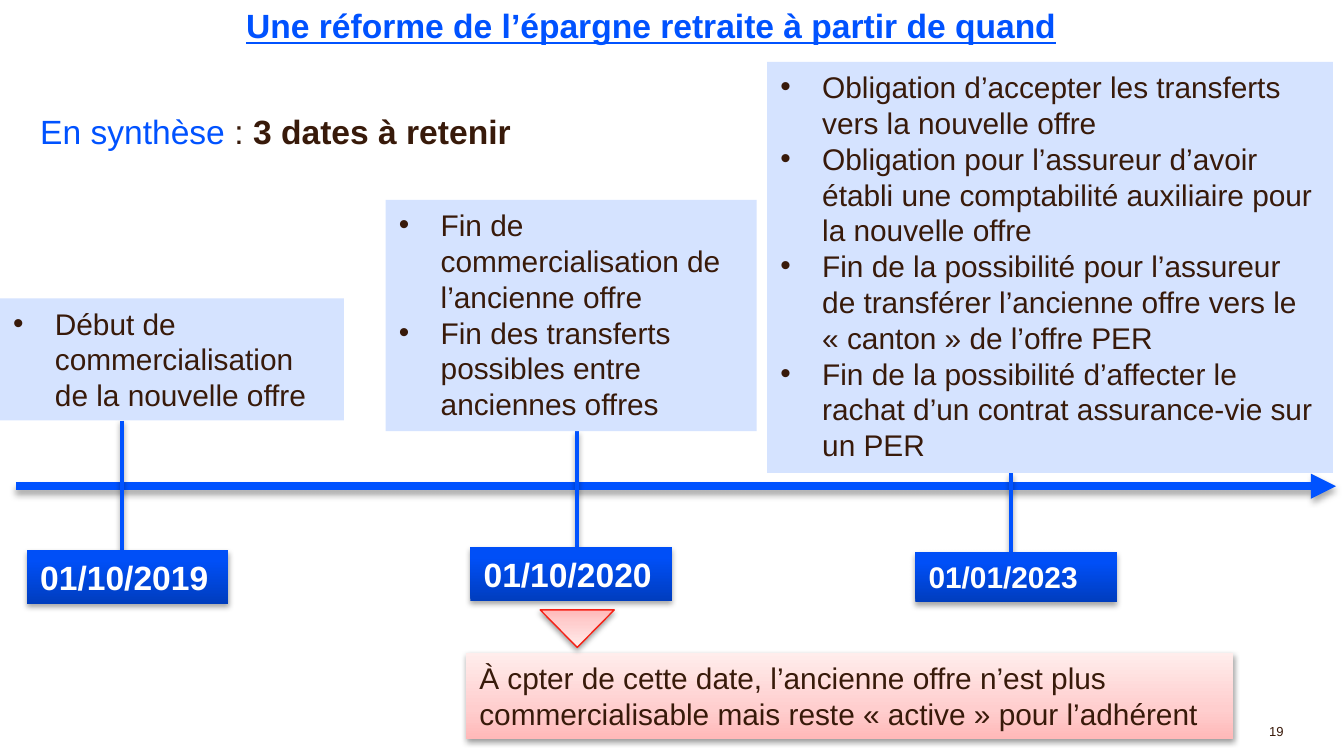
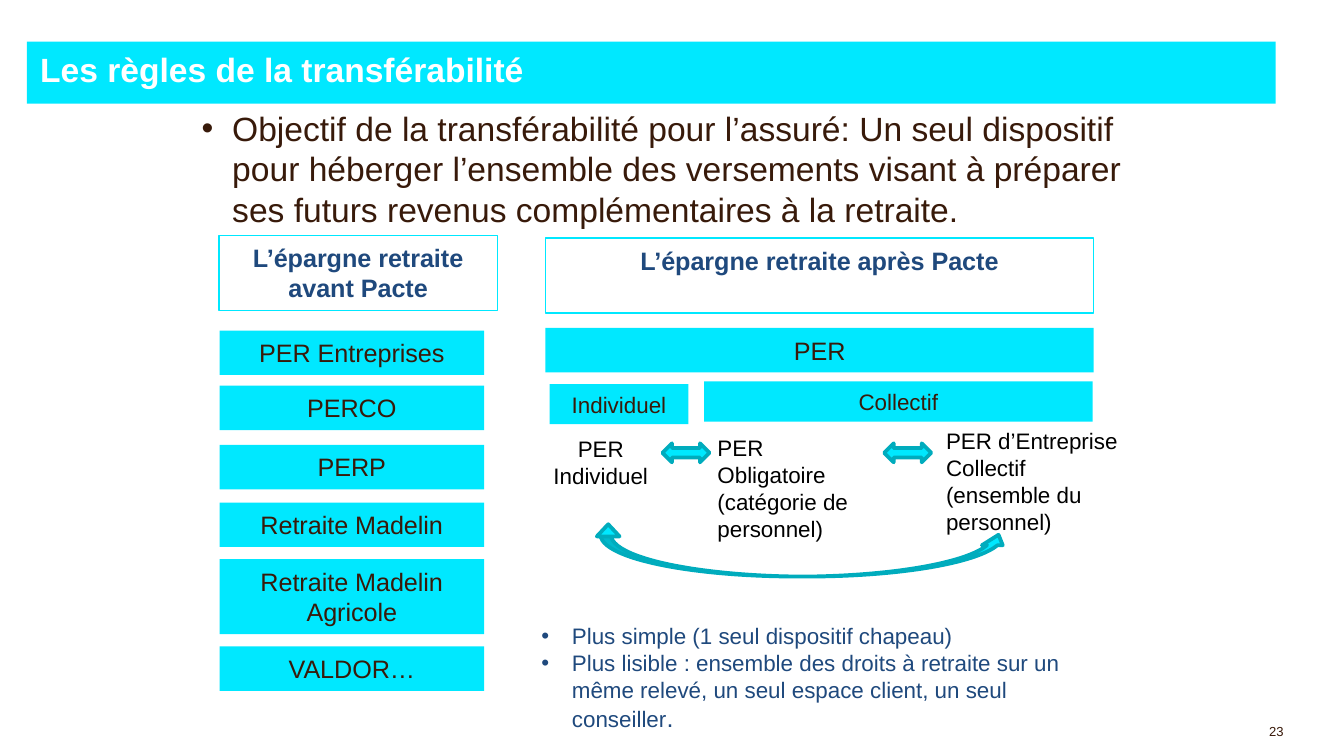
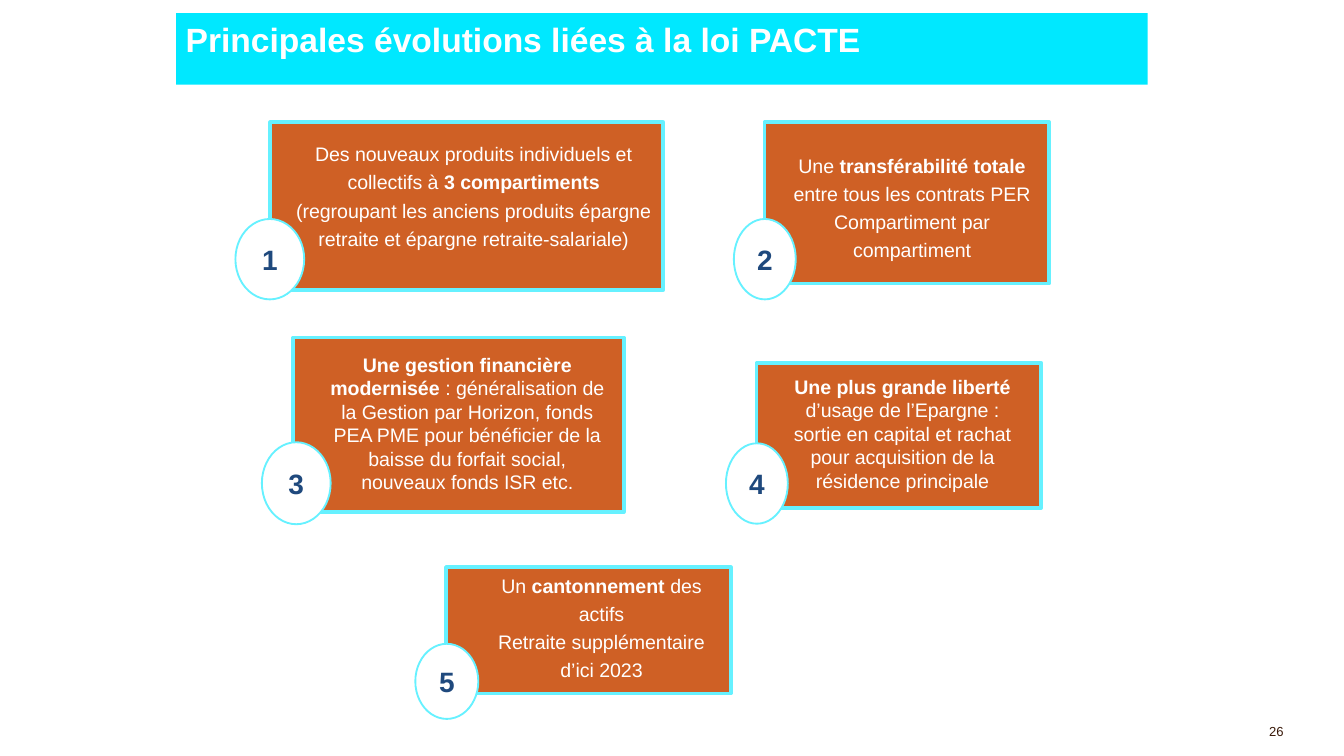
from pptx import Presentation
from pptx.dml.color import RGBColor
from pptx.enum.shapes import MSO_CONNECTOR, MSO_SHAPE
from pptx.enum.text import MSO_ANCHOR, PP_ALIGN
from pptx.oxml import parse_xml
from pptx.oxml.ns import nsdecls, qn
from pptx.util import Cm, Pt

# Shared look
FONT = "Arial"
BLUE, PALE_BLUE, NAVY = "0052FF", "D5E3FF", "1F497D"
CYAN, LIGHT_CYAN, DARK_CYAN = "00E8FF", "66F1FF", "00ACBD"
BROWN, RUST, WHITE, BLACK, RED = "381A0A", "CF6025", "FFFFFF", "000000", "F62015"
BLUE_FADE = [(0, "003DBE"), (80, "004FF7"), (100, "0050F8")]
PINK_FADE = [(0, "FFB9B9"), (35, "FFCECE"), (100, "FFEDEC")]
BOLD = {"bold": True}
PAGE_NUMBER = (23.44, 13.54, 1.07, 0.76)

# Slide 1: boxes are (left, top, width, height) in centimetres
TIMELINE_TITLE = "Une réforme de l’épargne retraite à partir de quand"
SUMMARY = [("En synthèse ", {"color": BLUE}), (": ", {}), ("3 dates à retenir", BOLD)]
EVENTS = [
    # date, date box, date size, stem x, effects box, effects
    ("01/10/2019", (0.51, 10.39, 3.81, 1.02), 18, 2.31, (0, 5.64, 6.5, 2.31),
     ["Début de commercialisation de la nouvelle offre"]),
    ("01/10/2020", (8.89, 10.34, 3.81, 1.02), 18, 10.9, (7.29, 3.78, 7.01, 4.37),
     ["Fin de commercialisation de l’ancienne offre",
      "Fin des transferts possibles entre anciennes offres"]),
    ("01/01/2023", (17.3, 10.44, 3.81, 0.94), 16, 19.1, (14.5, 1.17, 10.69, 7.77),
     ["Obligation d’accepter les transferts vers la nouvelle offre",
      "Obligation pour l’assureur d’avoir établi une comptabilité auxiliaire "
      "pour la nouvelle offre",
      "Fin de la possibilité pour l’assureur de transférer l’ancienne offre "
      "vers le « canton » de l’offre PER",
      "Fin de la possibilité d’affecter le rachat d’un contrat assurance-vie sur un PER"]),
]
WARNING = ("À cpter de cette date, l’ancienne offre n’est plus commercialisable "
           "mais reste « active » pour l’adhérent")

# Slide 2
TRANSFER_TITLE = "Les règles de la transférabilité"
GOAL = ("Objectif de la transférabilité pour l’assuré: Un seul dispositif pour héberger "
        "l’ensemble des versements visant à préparer ses futurs revenus complémentaires "
        "à la retraite.")
PERIODS = [("L’épargne retraite avant Pacte", (4.14, 4.45, 5.26, 1.42)),
           ("L’épargne retraite après Pacte", (10.31, 4.5, 10.36, 1.42))]
OLD_PRODUCTS = [("PER Entreprises", 6.25, 0.84), ("PERCO", 7.29, 0.84),
                ("PERP", 8.41, 0.84), ("Retraite Madelin", 9.5, 0.84),
                ("Retraite Madelin Agricole", 10.57, 1.42), ("VALDOR…", 12.22, 0.84)]
NEW_PRODUCTS = [("PER", (10.31, 6.2, 10.36, 0.84), 13.5),
                ("Individuel", (10.39, 7.26, 2.62, 0.76), 12),
                ("Collectif", (13.31, 7.21, 7.34, 0.76), 12)]
PLANS = [(["PER", "Individuel"], (9.55, 8.1, 3.61, 1.27), PP_ALIGN.CENTER),
         (["PER Obligatoire (catégorie de personnel)"],
          (13.31, 8.08, 3.43, 2.31), PP_ALIGN.LEFT),
         (["PER d’Entreprise Collectif (ensemble du personnel)"],
          (17.63, 7.95, 3.94, 2.31), PP_ALIGN.LEFT)]
EXCHANGES = [
    # arrow shape, box, flipped
    (MSO_SHAPE.LEFT_RIGHT_ARROW, (12.52, 8.38, 0.89, 0.36), False),
    (MSO_SHAPE.LEFT_RIGHT_ARROW, (16.71, 8.38, 0.89, 0.36), False),
    (MSO_SHAPE.CURVED_DOWN_ARROW, (11.35, 10.11, 7.72, 0.79), True),
    (MSO_SHAPE.ISOSCELES_TRIANGLE, (11.28, 9.91, 0.43, 0.23), False),
]
BENEFITS = ["Plus simple (1 seul dispositif chapeau)",
            [("Plus lisible : ensemble des droits à retraite sur un même relevé, "
              "un seul espace client, un seul conseiller", {}), (".", {"size": 13.5})]]

# Slide 3
CHANGES_TITLE = "Principales évolutions liées à la loi PACTE"
CHANGES = [
    # card, text box, badge, line spacing, paragraphs
    ((5.11, 2.31, 7.42, 3.18), (5.41, 2.05, 7.09, 3.23), (4.45, 4.14, 1.3, 1.52), 1.2,
     [[("Des nouveaux produits individuels et collectifs à ", {}),
       ("3 compartiments", BOLD)],
      "(regroupant les anciens produits épargne retraite et épargne retraite-salariale)"]),
    ((14.45, 2.31, 5.38, 3.05), (14.99, 3.11, 4.5, 1.55), (13.87, 4.14, 1.17, 1.52), 1.2,
     [[("Une ", {}), ("transférabilité totale ", BOLD), ("entre tous les contrats PER", {})],
      "Compartiment par compartiment"]),
    ((5.54, 6.38, 6.25, 3.3), (6.22, 7.06, 5.23, 1.88), (4.95, 8.36, 1.3, 1.55), None,
     [[("Une gestion financière modernisée ", BOLD),
       (": généralisation de la Gestion par Horizon, fonds PEA PME pour bénéficier "
        "de la baisse du forfait social, nouveaux fonds ISR etc.", {})]]),
    ((14.3, 6.86, 5.38, 2.74), (14.81, 7.42, 4.5, 1.55), (13.72, 8.38, 1.17, 1.52), None,
     [[("Une plus grande liberté ", BOLD),
       ("d’usage de l’Epargne : sortie en capital et rachat pour acquisition "
        "de la résidence principale", {})]]),
    ((8.43, 10.72, 5.38, 2.39), (9.12, 11.05, 4.5, 1.55), (7.85, 12.17, 1.19, 1.42), 1.2,
     [[("Un ", {}), ("cantonnement", BOLD), (" des actifs", {})],
      "Retraite supplémentaire d’ici 2023"]),
]


def rgb(color):
    return RGBColor.from_string(color)


def drop_shadow(effects, alpha, dist):
    effects.append(parse_xml(
        f'<a:outerShdw {nsdecls("a")} blurRad="{Pt(3.1)}" dist="{Pt(dist)}" dir="5400000" '
        f'rotWithShape="0"><a:srgbClr val="000000"><a:alpha val="{alpha * 1000}"/>'
        '</a:srgbClr></a:outerShdw>'))


def fade(shape, stops):
    """Fill a shape with a gradient running from bottom to top."""
    shape.fill.background()
    marks = "".join(f'<a:gs pos="{pos * 1000}"><a:srgbClr val="{color}"/></a:gs>'
                    for pos, color in stops)
    properties = shape._element.spPr
    properties.replace(properties.find(qn("a:noFill")), parse_xml(
        f'<a:gradFill {nsdecls("a")} rotWithShape="1"><a:gsLst>{marks}</a:gsLst>'
        '<a:lin ang="16200000" scaled="0"/></a:gradFill>'))


def add_box(slide, box, fill=None, line=None, width=0.75, kind=MSO_SHAPE.RECTANGLE,
            shadow=None, flip=False):
    shape = slide.shapes.add_shape(kind, *map(Cm, box))
    shape.shadow.inherit = False
    if isinstance(fill, list):
        fade(shape, fill)
    elif fill:
        shape.fill.solid()
        shape.fill.fore_color.rgb = rgb(fill)
    else:
        shape.fill.background()
    if line:
        shape.line.color.rgb = rgb(line)
        shape.line.width = Pt(width)
    else:
        shape.line.fill.background()
    properties = shape._element.spPr
    if shadow:
        drop_shadow(properties.find(qn("a:effectLst")), *shadow)
    if flip:
        properties.find(qn("a:xfrm")).set("flipV", "1")
    return shape


def add_line(slide, start, end, width, shadow, arrow=False):
    line = slide.shapes.add_connector(MSO_CONNECTOR.STRAIGHT, *map(Cm, start + end))
    line.line.color.rgb = rgb(BLUE)
    line.line.width = Pt(width)
    properties = line._element.spPr
    if arrow:
        properties.find(qn("a:ln")).append(
            parse_xml(f'<a:tailEnd {nsdecls("a")} type="triangle"/>'))
    effects = parse_xml(f'<a:effectLst {nsdecls("a")}/>')
    properties.append(effects)
    drop_shadow(effects, *shadow)


def write(shape, paragraphs, size, color=BROWN, bold=False, align=PP_ALIGN.LEFT,
          bullet=None, spacing=None, anchor=MSO_ANCHOR.TOP, insets=(0.25, 0.13), wrap=True):
    """Fill a shape with paragraphs, each a string or a list of (text, style) runs."""
    frame = shape.text_frame
    frame.word_wrap = wrap
    frame.vertical_anchor = anchor
    frame.margin_left = frame.margin_right = Cm(insets[0])
    frame.margin_top = frame.margin_bottom = Cm(insets[1])
    for index, content in enumerate(paragraphs):
        paragraph = frame.add_paragraph() if index else frame.paragraphs[0]
        if bullet:
            properties = paragraph._p.get_or_add_pPr()
            properties.set("marL", str(Cm(bullet)))
            properties.set("indent", str(-Cm(bullet)))
            properties.append(parse_xml(f'<a:buFont {nsdecls("a")} typeface="Arial"/>'))
            properties.append(parse_xml(f'<a:buChar {nsdecls("a")} char="•"/>'))
        paragraph.alignment = align
        if spacing:
            paragraph.line_spacing = spacing
        for text, style in [(content, {})] if isinstance(content, str) else content:
            run = paragraph.add_run()
            run.text = text
            run.font.name = FONT
            run.font.size = Pt(style.get("size", size))
            run.font.bold = style.get("bold", bold)
            run.font.underline = style.get("underline")
            run.font.color.rgb = rgb(style.get("color", color))


def add_text(slide, box, paragraphs, size, **style):
    write(slide.shapes.add_textbox(*map(Cm, box)), paragraphs, size, **style)


def add_band(slide, box, title, insets=(0.25, 0.13)):
    write(add_box(slide, box, CYAN), [title], 18, color=WHITE, bold=True, insets=insets)


def new_slide(deck, number):
    slide = deck.slides.add_slide(deck.slide_layouts[6])
    add_text(slide, PAGE_NUMBER, [number], 7, color="391909", align=PP_ALIGN.RIGHT)
    return slide


def build_timeline(deck):
    slide = new_slide(deck, "19")
    add_text(slide, (0.51, -0.03, 23.6, 1.17), [[(TIMELINE_TITLE, {"underline": True})]],
             18, color=BLUE, bold=True, align=PP_ALIGN.CENTER)
    add_text(slide, (0.51, 1.96, 24.61, 11.66), [SUMMARY], 18)
    add_line(slide, (0.3, 9.19), (25.25, 9.19), 4.5, (35, 1.8), arrow=True)
    # Each event: stem, effects above, date below
    for date, date_box, size, stem, effects_box, effects in EVENTS:
        add_line(slide, (stem, effects_box[1] + effects_box[3]), (stem, date_box[1]),
                 2, (38, 1.6))
        write(add_box(slide, effects_box, PALE_BLUE), effects, 16, bullet=0.79)
        write(add_box(slide, date_box, BLUE_FADE, shadow=(35, 1.8)), [date], size,
              color=WHITE, bold=True)
    # Warning under the second date
    write(add_box(slide, (8.81, 12.34, 14.5, 1.63), PINK_FADE, shadow=(38, 1.6)),
          [WARNING], 16)
    add_box(slide, (10.21, 11.53, 1.4, 0.71), PINK_FADE, RED,
            kind=MSO_SHAPE.ISOSCELES_TRIANGLE, shadow=(38, 1.6), flip=True)


def build_transfer(deck):
    slide = new_slide(deck, "23")
    add_band(slide, (0.51, 0.79, 23.6, 1.17), TRANSFER_TITLE)
    add_text(slide, (3.56, 1.91, 18.16, 11.1), [GOAL], 18, bullet=0.58)
    for period, box in PERIODS:
        write(add_box(slide, box, line=CYAN), [period], 13.5, color=NAVY, bold=True,
              align=PP_ALIGN.CENTER)
    # Products before and after the law
    old = [(name, (4.15, top, 5, height), 13.5) for name, top, height in OLD_PRODUCTS]
    for name, box, size in old + NEW_PRODUCTS:
        write(add_box(slide, box, CYAN), [name], size, align=PP_ALIGN.CENTER)
    for plan, box, align in PLANS:
        add_text(slide, box, plan, 12, color=BLACK, align=align)
    for kind, box, flip in EXCHANGES:
        add_box(slide, box, CYAN, DARK_CYAN, 2, kind, flip=flip)
    add_text(slide, (9.98, 11.63, 10.95, 2.39), BENEFITS, 12, color=NAVY, bullet=0.58)


def build_changes(deck):
    slide = new_slide(deck, "26")
    add_band(slide, (3.33, 0.25, 18.36, 1.35), CHANGES_TITLE, insets=(0.18, 0.1))
    # Numbered cards
    for number, (card, text_box, badge, spacing, change) in enumerate(CHANGES, 1):
        add_box(slide, card, RUST, LIGHT_CYAN, 2)
        add_text(slide, text_box, change, 10.5, color=WHITE, align=PP_ALIGN.CENTER,
                 spacing=spacing, anchor=MSO_ANCHOR.MIDDLE, insets=(0, 0))
        write(add_box(slide, badge, WHITE, LIGHT_CYAN, 1, MSO_SHAPE.OVAL), [str(number)],
              15, color=NAVY, bold=True, align=PP_ALIGN.CENTER,
              anchor=MSO_ANCHOR.MIDDLE, wrap=False)


def main():
    deck = Presentation()
    deck.slide_width, deck.slide_height = Cm(25.4), Cm(14.29)
    build_timeline(deck)
    build_transfer(deck)
    build_changes(deck)
    deck.save("out.pptx")


if __name__ == "__main__":
    main()
